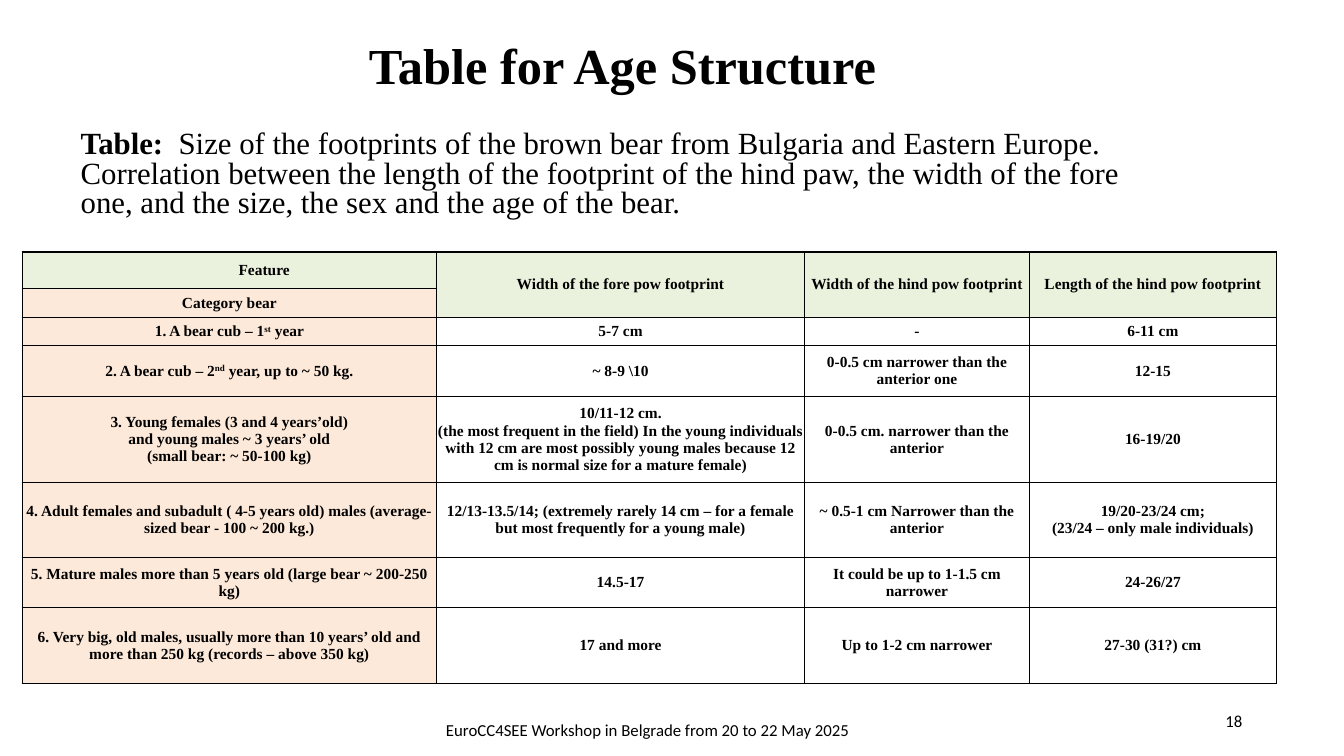
from lxml.etree import SubElement
from pptx import Presentation
from pptx.dml.color import RGBColor
from pptx.enum.text import MSO_ANCHOR as Anchor, MSO_AUTO_SIZE as AutoSize, PP_ALIGN as Align
from pptx.oxml.ns import qn
from pptx.util import Emu, Pt

PX = 9144
SERIF, SANS = "Times New Roman", "Calibri"
BLACK, GREEN, PEACH = "000000", "EAF1DD", "FDE9D9"
COLUMN_WIDTHS = [411, 365, 223, 245]
ROW_HEIGHTS = [36, 29, 28, 50, 86, 74, 50, 75]
FEATURE_INDENT = 69
HEADINGS = ["Feature", "Width of the fore pow footprint",
            "Width of the hind pow footprint", "Length of the hind pow footprint"]
BEARS = [
    ["1. A bear cub – 1^st^ year", "5-7 cm", "-", "6-11 cm"],
    ["2. A bear cub – 2^nd^ year, up to ~ 50 kg.", "~ 8-9 \\10",
     "0-0.5 cm narrower than the anterior one", "12-15"],
    ["3. Young females (3 and 4 years’old)\nand young males ~ 3 years’ old\n"
     "(small bear: ~ 50-100 kg)",
     "10/11-12 cm.\n(the most frequent in the field) In the young individuals with 12 cm "
     "are most possibly young males because 12 cm is normal size for a mature female)",
     "0-0.5 cm. narrower than the anterior", "16-19/20"],
    ["4. Adult females and subadult ( 4-5 years old) males (average-sized bear - 100 ~ 200 kg.)",
     "12/13-13.5/14; (extremely rarely 14 cm – for a female but most frequently for a young male)",
     "~ 0.5-1 cm Narrower than the anterior",
     "19/20-23/24 cm;\n(23/24 – only male individuals)"],
    ["5. Mature males more than 5 years old (large bear ~ 200-250 kg)", "14.5-17",
     "It could be up to 1-1.5 cm narrower", "24-26/27"],
    ["6. Very big, old males, usually more than 10 years’ old and more than 250 kg "
     "(records – above 350 kg)",
     "17 and more", "Up to 1-2 cm narrower", "27-30 (31?) cm"],
]


def px(length):
    return Emu(length * PX)


def color(value):
    return RGBColor.from_string(value)


def add_span(para, text, size, font, bold, raised=False):
    span = para.add_run()
    span.text = text
    span.font.size = Pt(size)
    span.font.name = font
    span.font.bold = bold
    span.font.color.rgb = color(BLACK)
    if raised:
        span.font._element.set("baseline", "30000")


def write(frame, text, size=11, font=SERIF, bold=False, align=Align.CENTER,
          spacing=None, lead=""):
    for index, line in enumerate(text.split("\n")):
        para = frame.add_paragraph() if index else frame.paragraphs[0]
        para.alignment = align
        para.space_before = Pt(0)
        if spacing:
            para.line_spacing = spacing
        if lead:
            add_span(para, lead, size, font, True)
        for part, words in enumerate(line.split("^")):
            add_span(para, words, size, font, bold, raised=part % 2 == 1)


def place(box, left, top, width, height, anchor):
    box.left, box.top, box.width, box.height = map(px, (left, top, width, height))
    frame = box.text_frame
    frame.word_wrap = True
    frame.auto_size = AutoSize.NONE
    frame.vertical_anchor = anchor
    return frame


def remove_bullet(para):
    properties = para._p.get_or_add_pPr()
    properties.set("marL", "0")
    properties.set("indent", "0")
    SubElement(properties, qn("a:buNone"))


def add_label(page, text, left, top, width, height, align):
    box = page.shapes.add_textbox(0, 0, 0, 0)
    frame = place(box, left, top, width, height, Anchor.MIDDLE)
    write(frame, text, size=12, font=SANS, align=align)


def add_borders(cell):
    properties = cell._tc.get_or_add_tcPr()
    for position, side in enumerate(("lnL", "lnR", "lnT", "lnB")):
        line = properties.makeelement(qn(f"a:{side}"), {"w": str(Pt(1))})
        fill = SubElement(line, qn("a:solidFill"))
        SubElement(fill, qn("a:srgbClr"), val=BLACK)
        properties.insert(position, line)


def format_cell(cell, text, fill, indent=0):
    cell.margin_left = px(indent)
    cell.margin_right = cell.margin_top = cell.margin_bottom = 0
    cell.vertical_anchor = Anchor.MIDDLE
    if fill:
        cell.fill.solid()
        cell.fill.fore_color.rgb = color(fill)
    else:
        cell.fill.background()
    add_borders(cell)
    if text:
        write(cell.text_frame, text, bold=True)


def add_footprint_table(page, left, top):
    rows = [HEADINGS, ["Category bear", "", "", ""], *BEARS]
    frame = page.shapes.add_table(len(rows), len(HEADINGS), px(left), px(top),
                                  px(sum(COLUMN_WIDTHS)), px(sum(ROW_HEIGHTS)))
    table = frame.table
    table.first_row = table.horz_banding = False
    for column, width in zip(table.columns, COLUMN_WIDTHS):
        column.width = px(width)
    for row, height in zip(table.rows, ROW_HEIGHTS):
        row.height = px(height)
    for r, texts in enumerate(rows):
        for c, text in enumerate(texts):
            heading = r == 0 or (r == 1 and c > 0)
            fill = GREEN if heading else PEACH if c == 0 else None
            indent = FEATURE_INDENT if r == c == 0 else 0
            format_cell(table.cell(r, c), text, fill, indent)
    for c in range(1, len(HEADINGS)):
        table.cell(0, c).merge(table.cell(1, c))


def main():
    deck = Presentation()
    deck.slide_width, deck.slide_height = px(1333), px(750)
    page = deck.slides.add_slide(deck.slide_layouts[1])
    title, body = page.placeholders
    write(place(title, 37, 37, 1161, 62, Anchor.MIDDLE), "Table for Age Structure",
          size=36, bold=True, spacing=0.9)
    frame = place(body, 70, 125, 1073, 108, Anchor.TOP)
    remove_bullet(frame.paragraphs[0])
    write(frame, " Size of the footprints of the brown bear from Bulgaria and Eastern Europe. "
          "Correlation between the length of the footprint of the hind paw, the width of the "
          "fore one, and the size, the sex and the age of the bear.",
          size=22, align=Align.LEFT, spacing=0.8, lead="Table: ")
    add_footprint_table(page, 22, 250)
    add_label(page, "18", 942, 695, 300, 40, Align.RIGHT)
    add_label(page, "EuroCC4SEE Workshop in Belgrade from 20 to 22 May 2025",
              204, 713, 877, 22, Align.CENTER)
    deck.save("out.pptx")


if __name__ == "__main__":
    main()
